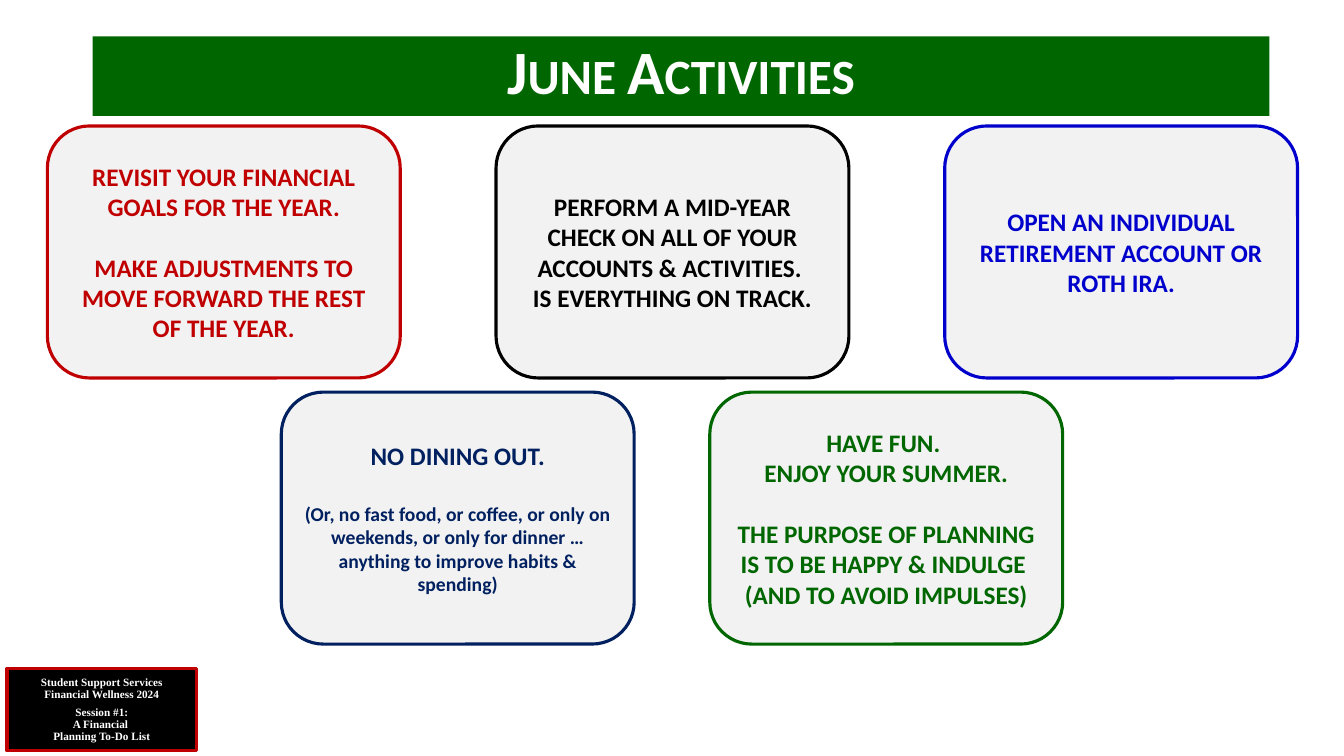
from pptx import Presentation
from pptx.dml.color import RGBColor
from pptx.enum.shapes import MSO_SHAPE
from pptx.enum.text import MSO_ANCHOR, PP_ALIGN
from pptx.util import Emu, Pt

PX = 9144  # 100 px to the inch
CARD_WIDTH, CARD_HEIGHT = 350, 250
BLANK_LINE = 22  # points, one line of 18 pt text
RED, GREEN, BLUE, NAVY = "C00000", "006600", "0000CC", "002060"
BLACK, WHITE, PALE = "000000", "FFFFFF", "F2F2F2"


def px(length):
    return Emu(length * PX)


def color(value):
    return RGBColor.from_string(value)


def add_box(slide, box, fill, line=None, preset=MSO_SHAPE.RECTANGLE,
            anchor=MSO_ANCHOR.MIDDLE):
    shape = slide.shapes.add_shape(preset, *map(px, box))
    shape.shadow.inherit = False
    shape.fill.solid()
    shape.fill.fore_color.rgb = color(fill)
    if line:
        shape.line.color.rgb = color(line)
        shape.line.width = Pt(2.25)
    else:
        shape.line.fill.background()
    shape.text_frame.word_wrap = True
    shape.text_frame.vertical_anchor = anchor
    return shape


def add_text(shape, text, size=18, ink=WHITE, font="Calibri", before=0,
             spacing=1.0, small_caps=False):
    frame = shape.text_frame
    paragraph = frame.paragraphs[0] if not frame.text else frame.add_paragraph()
    paragraph.alignment = PP_ALIGN.CENTER
    paragraph.line_spacing = spacing
    paragraph.space_before = Pt(before)
    run = paragraph.add_run()
    run.text = text
    run.font.name = font
    run.font.size = Pt(size)
    run.font.bold = True
    run.font.color.rgb = color(ink)
    if small_caps:
        run.font._element.set("cap", "small")


def add_title(slide, box):
    banner = add_box(slide, box, GREEN, anchor=MSO_ANCHOR.TOP)
    add_text(banner, "June Activities", size=44, spacing=0.9, small_caps=True)


def add_session_label(slide, box):
    label = add_box(slide, box, BLACK, RED)
    lines = [("Student Support Services", 0), ("Financial Wellness 2024", 0),
             ("Session #1:", 4), ("A Financial ", 0),
             ("Planning To-Do List", 0)]
    for text, before in lines:
        add_text(label, text, size=8, font="Times New Roman", before=before,
                 spacing=0.9)


def add_card_row(slide, left, top, pitch, cards):
    for index, (ink, paragraphs) in enumerate(cards):
        box = (left + index * pitch, top, CARD_WIDTH, CARD_HEIGHT)
        card = add_box(slide, box, PALE, ink, MSO_SHAPE.ROUNDED_RECTANGLE)
        for text, text_format in paragraphs:
            add_text(card, text, ink=ink, **text_format)


TOP_CARDS = [
    (RED, [
        ("REVISIT YOUR FINANCIAL GOALS FOR THE YEAR.", {}),
        ("MAKE ADJUSTMENTS TO MOVE FORWARD THE REST OF THE YEAR.",
         {"before": BLANK_LINE}),
    ]),
    (BLACK, [
        ("PERFORM A MID-YEAR CHECK ON ALL OF YOUR ACCOUNTS & ACTIVITIES. ", {}),
        ("IS EVERYTHING ON TRACK.", {}),
    ]),
    (BLUE, [("OPEN AN INDIVIDUAL RETIREMENT ACCOUNT OR ROTH IRA.", {})]),
]
BOTTOM_CARDS = [
    (NAVY, [
        ("NO DINING OUT.", {}),
        ("(Or, no fast food, or coffee, or only on weekends, or only for "
         "dinner …anything to improve habits & spending)",
         {"size": 14, "before": BLANK_LINE}),
    ]),
    (GREEN, [
        ("HAVE FUN. ", {}),
        ("ENJOY YOUR SUMMER.", {}),
        ("THE PURPOSE OF PLANNING IS TO BE HAPPY & INDULGE ",
         {"before": BLANK_LINE}),
        ("(AND TO AVOID IMPULSES)", {}),
    ]),
]


def main():
    presentation = Presentation()
    presentation.slide_width, presentation.slide_height = px(1333), px(750)
    slide = presentation.slides.add_slide(presentation.slide_layouts[6])

    # Session label and title banner
    add_session_label(slide, (7, 663, 188, 82))
    add_title(slide, (92, 36, 1167, 79))

    # Activity cards: three above, two below
    add_card_row(slide, 47, 125, 445, TOP_CARDS)
    add_card_row(slide, 279, 389, 425, BOTTOM_CARDS)

    presentation.save("out.pptx")


if __name__ == "__main__":
    main()
